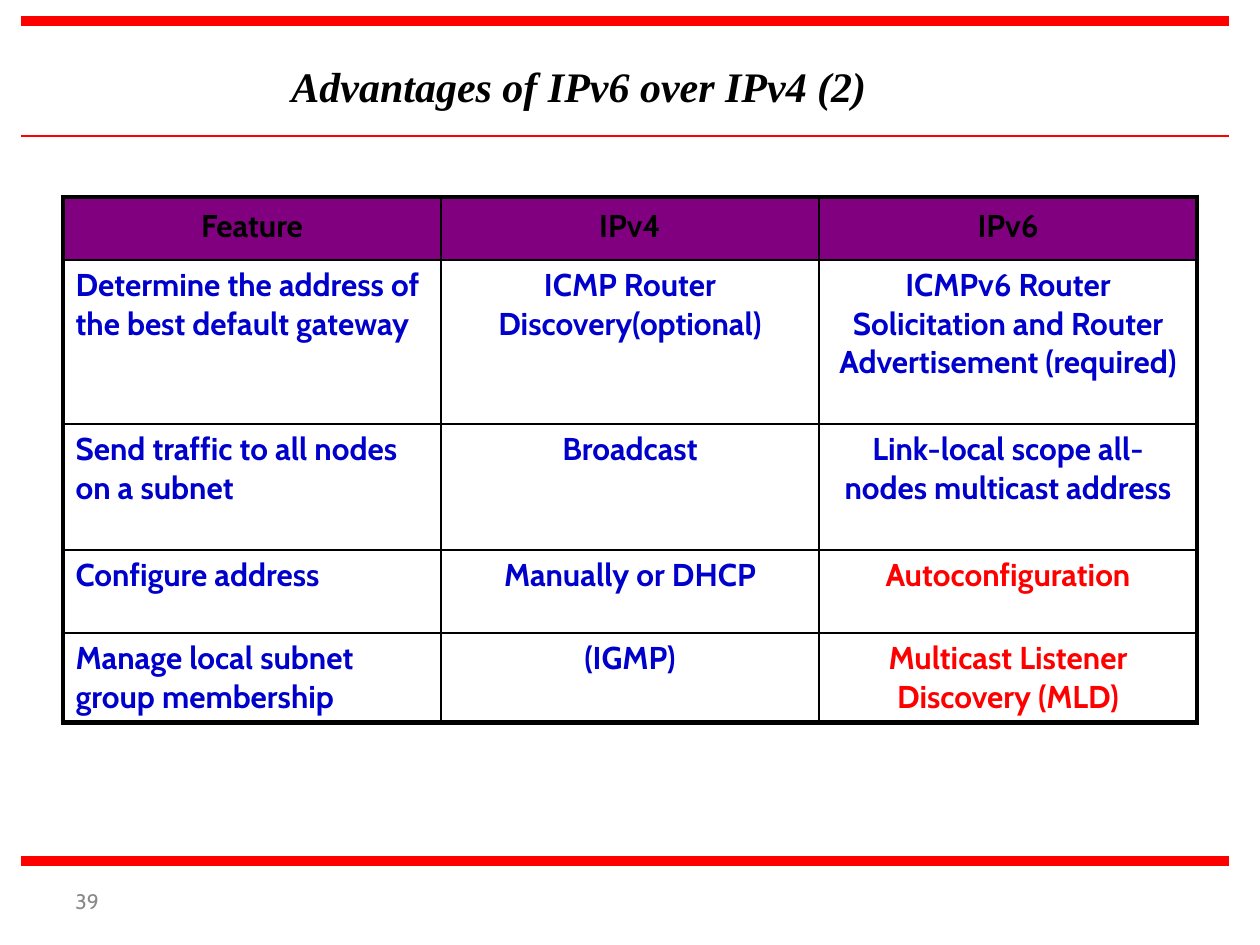
import dataclasses

import lxml.etree
import pptx
import pptx.dml.color
import pptx.enum.shapes
import pptx.enum.text
import pptx.oxml.ns
import pptx.util

PX = 914400 / 126
ALIGN = pptx.enum.text.PP_ALIGN
MIDDLE = pptx.enum.text.MSO_ANCHOR.MIDDLE


@dataclasses.dataclass(frozen=True)
class Theme:
    black: str = "000000"
    red: str = "FF0000"
    blue: str = "0000CC"
    purple: str = "800080"
    grey: str = "898989"
    title_font: str = "Times New Roman"
    body_font: str = "Cabin"
    title_size: int = 24
    table_size: int = 18
    number_size: int = 12
    thick_rule: float = 6
    thin_rule: float = 1.5
    outer_border: float = 3
    inner_border: float = 1.5


THEME = Theme()
HEADER = ("Feature", "IPv4", "IPv6")
ROWS = (
    ("Determine the address of the best default gateway",
     "ICMP Router Discovery(optional)",
     "ICMPv6 Router Solicitation and Router Advertisement (required)"),
    ("Send traffic to all nodes on a subnet", "Broadcast",
     "Link-local scope all-nodes multicast address"),
    ("Configure address", "Manually or DHCP", "Autoconfiguration"),
    ("Manage local subnet group membership", "(IGMP)",
     "Multicast Listener Discovery (MLD)"),
)
HIGHLIGHTS = {"Autoconfiguration", "Multicast Listener Discovery (MLD)"}
ROW_HEIGHTS = (63, 164, 126, 83, 88)
COLUMN_WIDTH = 378


def px(*lengths):
    return [pptx.util.Emu(round(length * PX)) for length in lengths]


def rgb(color):
    return pptx.dml.color.RGBColor.from_string(color)


def write(frame, text, font, size, color, align, bold=False, italic=False):
    """Put one formatted paragraph in the frame and return it."""
    frame.text = text
    frame.word_wrap = True
    para = frame.paragraphs[0]
    para.alignment = align
    for span in para.runs:
        span.font.name = font
        span.font.size = pptx.util.Pt(size)
        span.font.color.rgb = rgb(color)
        span.font.bold = bold
        span.font.italic = italic
    return para


def add_title(page, text):
    title = page.shapes.title
    title.left, title.top, title.width, title.height = px(53, 32, 1052, 108)
    write(title.text_frame, text, THEME.title_font, THEME.title_size,
          THEME.black, ALIGN.CENTER, bold=True, italic=True)
    title.text_frame.vertical_anchor = MIDDLE


def add_rule(page, y, weight):
    """Draw a red line across the page."""
    rule = page.shapes.add_connector(
        pptx.enum.shapes.MSO_CONNECTOR.STRAIGHT, *px(21, y, 1229, y))
    rule.line.color.rgb = rgb(THEME.red)
    rule.line.width = pptx.util.Pt(weight)
    lxml.etree.SubElement(rule._element.spPr, pptx.oxml.ns.qn("a:effectLst"))


def set_borders(cell, outer_sides):
    """Border every side, heavier on those at the table's edge."""
    properties = cell._tc.get_or_add_tcPr()
    for index, side in enumerate("LRTB"):
        weight = THEME.outer_border if side in outer_sides else THEME.inner_border
        border = pptx.oxml.parse_xml(
            f'<a:ln{side} {pptx.oxml.ns.nsdecls("a")} w="{pptx.util.Pt(weight)}">'
            f'<a:solidFill><a:srgbClr val="{THEME.black}"/></a:solidFill>'
            f'</a:ln{side}>')
        properties.insert(index, border)


def fill_cell(cell, text, is_header, is_label):
    if is_header:
        color = THEME.black
        cell.fill.solid()
        cell.fill.fore_color.rgb = rgb(THEME.purple)
    else:
        color = THEME.red if text in HIGHLIGHTS else THEME.blue
        cell.fill.background()
    align = ALIGN.LEFT if is_label and not is_header else ALIGN.CENTER
    para = write(cell.text_frame, text, THEME.body_font, THEME.table_size,
                 color, align, bold=True)
    para.space_before = pptx.util.Pt(0.2 * THEME.table_size)
    if is_header:
        para.line_spacing = 1.1


def add_comparison_table(page):
    content = (HEADER, *ROWS)
    last_row, last_column = len(content) - 1, len(HEADER) - 1
    table = page.shapes.add_table(
        len(content), len(HEADER),
        *px(63, 197, COLUMN_WIDTH * len(HEADER), sum(ROW_HEIGHTS))).table
    table.first_row = table.horz_banding = False
    for column in table.columns:
        column.width = px(COLUMN_WIDTH)[0]
    for r, texts in enumerate(content):
        table.rows[r].height = px(ROW_HEIGHTS[r])[0]
        for c, text in enumerate(texts):
            cell = table.cell(r, c)
            fill_cell(cell, text, is_header=r == 0, is_label=c == 0)
            edges = {"L": c == 0, "R": c == last_column,
                     "T": r == 0, "B": r == last_row}
            set_borders(cell, [side for side in edges if edges[side]])


def add_page_number(page, number):
    box = page.shapes.add_textbox(*px(63, 876, 294, 50))
    write(box.text_frame, number, THEME.body_font, THEME.number_size,
          THEME.grey, ALIGN.LEFT)
    box.text_frame.vertical_anchor = MIDDLE


def main():
    deck = pptx.Presentation()
    deck.slide_width, deck.slide_height = px(1260, 945)
    page = deck.slides.add_slide(deck.slide_layouts[5])
    add_title(page, "Advantages of IPv6 over IPv4 (2)")
    add_comparison_table(page)
    add_page_number(page, "39")
    for y, weight in ((21, THEME.thick_rule), (136, THEME.thin_rule),
                      (861, THEME.thick_rule)):
        add_rule(page, y, weight)
    deck.save("out.pptx")


if __name__ == "__main__":
    main()
